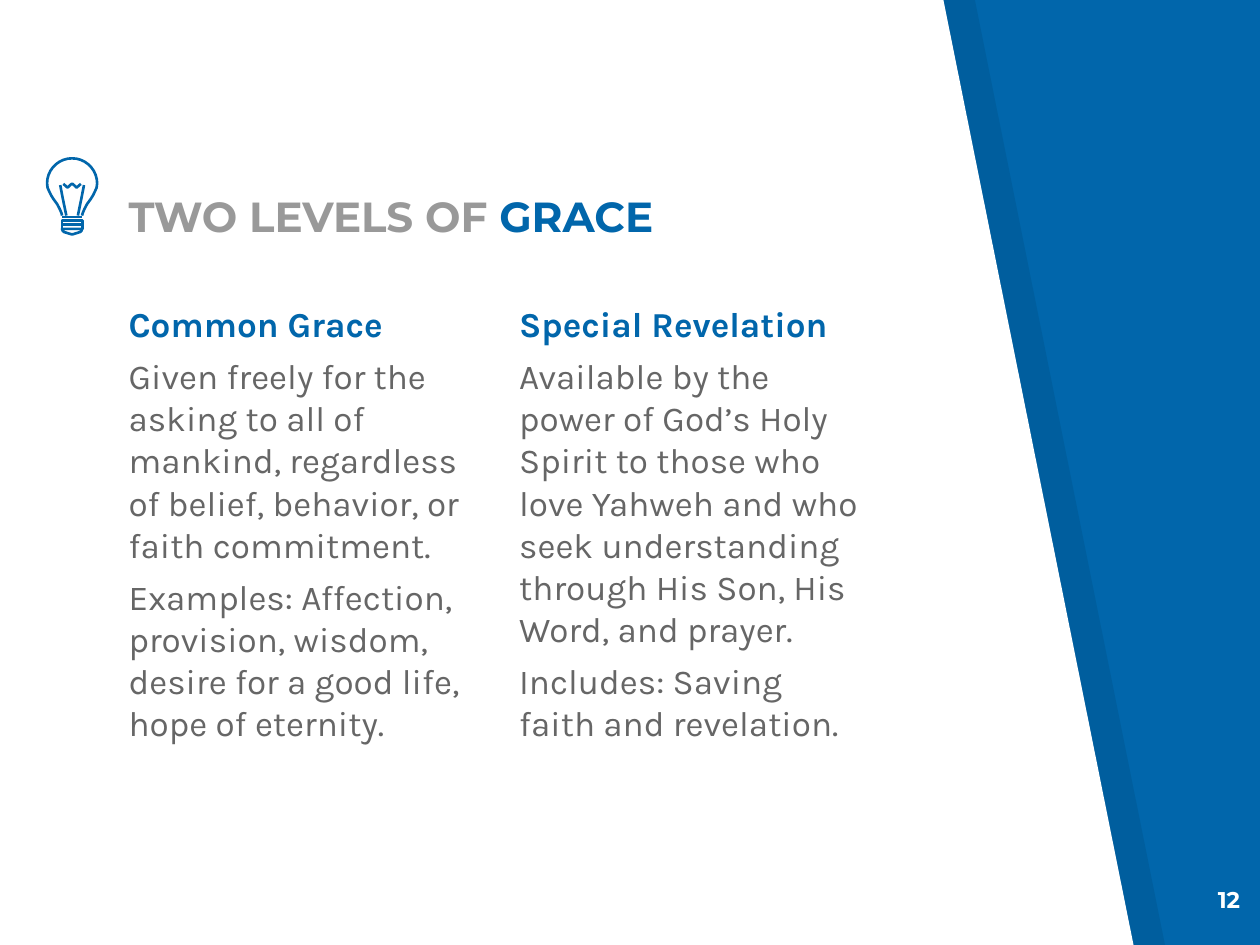
import math

import pptx
import pptx.dml.color
import pptx.enum.text
import pptx.oxml.ns
import pptx.util
from lxml import etree

Pt = pptx.util.Pt
RGBColor = pptx.dml.color.RGBColor
Align = pptx.enum.text.PP_ALIGN
Anchor = pptx.enum.text.MSO_ANCHOR

BLUE = RGBColor(0x01, 0x66, 0xAB)
BLACK = RGBColor(0x00, 0x00, 0x00)
WHITE = RGBColor(0xFF, 0xFF, 0xFF)
TITLE_GRAY = RGBColor(0x99, 0x99, 0x99)
BODY_GRAY = RGBColor(0x66, 0x66, 0x66)

INSET = 7.2
COLUMNS = [
    ("Common Grace", [
        "Given freely for the asking to all of mankind, regardless of belief, "
        "behavior, or faith commitment.",
        "Examples: Affection, provision, wisdom, desire for a good life, "
        "hope of eternity."]),
    ("Special Revelation", [
        "Available by the power of God’s Holy Spirit to those who love Yahweh "
        "and who seek understanding through His Son, His Word, and prayer.",
        "Includes: Saving faith and revelation."]),
]


def add_outline(shapes, points, close=False):
    """Draw straight segments through points given in points."""
    corners = [(Pt(x), Pt(y)) for x, y in points]
    builder = shapes.build_freeform(*corners[0])
    builder.add_line_segments(corners[1:], close=close)
    shape = builder.convert_to_shape()
    shape.shadow.inherit = False
    return shape


def add_text_frame(slide, box, anchor=Anchor.TOP):
    frame = slide.shapes.add_textbox(*map(Pt, box)).text_frame
    frame.word_wrap = True
    frame.vertical_anchor = anchor
    frame.margin_left = frame.margin_right = Pt(INSET)
    frame.margin_top = frame.margin_bottom = Pt(INSET)
    return frame


def set_font(font, name, size, color, bold):
    font.name = name
    font.size = Pt(size)
    font.color.rgb = color
    font.bold = bold


def add_panel(slide, box, color, opacity=100):
    """Slanted panel, wider at the bottom than at the top."""
    left, top, width, height = box
    bottom = top + height
    panel = add_outline(slide.shapes, [
        (left, top), (left, bottom), (left + width, bottom),
        (left + 0.832 * width, 0)], close=True)
    panel.fill.solid()
    panel.fill.fore_color.rgb = color
    panel.line.fill.background()
    if opacity < 100:
        qualified = pptx.oxml.ns.qn
        color_element = panel.fill._xPr.find(".//" + qualified("a:srgbClr"))
        etree.SubElement(color_element, qualified("a:alpha"), val=str(opacity * 1000))


def add_title(slide, box):
    paragraph = add_text_frame(slide, box, Anchor.BOTTOM).paragraphs[0]
    for text, color in [("TWO LEVELS OF ", TITLE_GRAY), ("GRACE", BLUE)]:
        run = paragraph.add_run()
        run.text = text
        set_font(run.font, "Montserrat", 24, color, True)


def add_column(slide, box, heading, texts):
    frame = add_text_frame(slide, box)
    paragraph = frame.paragraphs[0]
    paragraph.text = heading
    set_font(paragraph.font, "Karla", 20, BLUE, True)
    for text in texts:
        paragraph = frame.add_paragraph()
        paragraph.text = text
        paragraph.space_before = Pt(6)
        set_font(paragraph.font, "Karla", 20, BODY_GRAY, False)


def add_page_number(slide, box):
    paragraph = add_text_frame(slide, box).paragraphs[0]
    paragraph.text = "12"
    paragraph.alignment = Align.RIGHT
    set_font(paragraph.font, "Montserrat", 13, WHITE, True)


def add_light_bulb(slide, box):
    """Line icon; offsets are measured from the centre of the round glass."""
    left, top, width, height = box
    radius = width / 2
    center_x, center_y = left + radius, top + radius
    base = 5.8

    def mirror(points):
        return [(-x, y) for x, y in points]

    # Glass: half circle on top, with a neck on each side
    neck = [(14, 2.5), (13, 4.7), (12, 6.8), (10.6, 9), (8.5, 11.9),
            (7, 14.8), (6.1, 16.9), (5.7, 18.4)]
    dome = [(radius * math.cos(math.radians(angle)),
             -radius * math.sin(math.radians(angle)))
            for angle in range(0, 181, 10)]
    glass = neck[::-1] + dome + mirror(neck)

    # Filament and its two supports
    support = [(6.8, 1), (5.4, 8.3), (3.3, 18.4)]
    filament = [(-5, 0.3), (-2.6, 2.4), (-0.3, 0.3), (0.3, 0.3), (2.6, 2.4), (5, 0.3)]

    # Screw base: collar, two bands and a tip
    collar = [(-base, 19.2), (base, 19.2)]
    bands = [[(-base, y), (base, y), (base, y + 2.4), (-base, y + 2.4)]
             for y in (21.2, 23.6)]
    tip_side = [(base, 26), (5.3, 27.2), (4.6, 27.8), (0.4, height - radius)]
    tip = tip_side + mirror(tip_side)[::-1]

    open_lines = [glass, support, mirror(support), filament, collar]
    outlines = [(points, False) for points in open_lines]
    outlines += [(points, True) for points in bands + [tip]]
    group = slide.shapes.add_group_shape()
    for points, close in outlines:
        placed = [(center_x + x, center_y + y) for x, y in points]
        shape = add_outline(group.shapes, placed, close)
        shape.fill.background()
        shape.line.color.rgb = BLUE
        shape.line.width = Pt(1.5)


def main():
    presentation = pptx.Presentation()
    presentation.slide_width = Pt(720)
    presentation.slide_height = Pt(540)
    slide = presentation.slides.add_slide(presentation.slide_layouts[6])
    slide.background.fill.solid()
    slide.background.fill.fore_color.rgb = BLUE

    # Slanted panels: the shade strip, then the white page
    add_panel(slide, (18, -1.2, 648, 542.4), BLACK, opacity=7)
    add_panel(slide, (0, -1.2, 648, 542.4), WHITE)

    # Title and columns
    add_title(slide, (66.4, 101.5, 378, 43.2))
    for index, (heading, texts) in enumerate(COLUMNS):
        add_column(slide, (66.4 + index * 223.2, 165.6, 210.2, 255.6), heading, texts)

    add_page_number(slide, (672.5, 499, 43.2, 41))
    add_light_bulb(slide, (26.9, 90.5, 28.6, 43.4))
    presentation.save("out.pptx")


if __name__ == "__main__":
    main()
